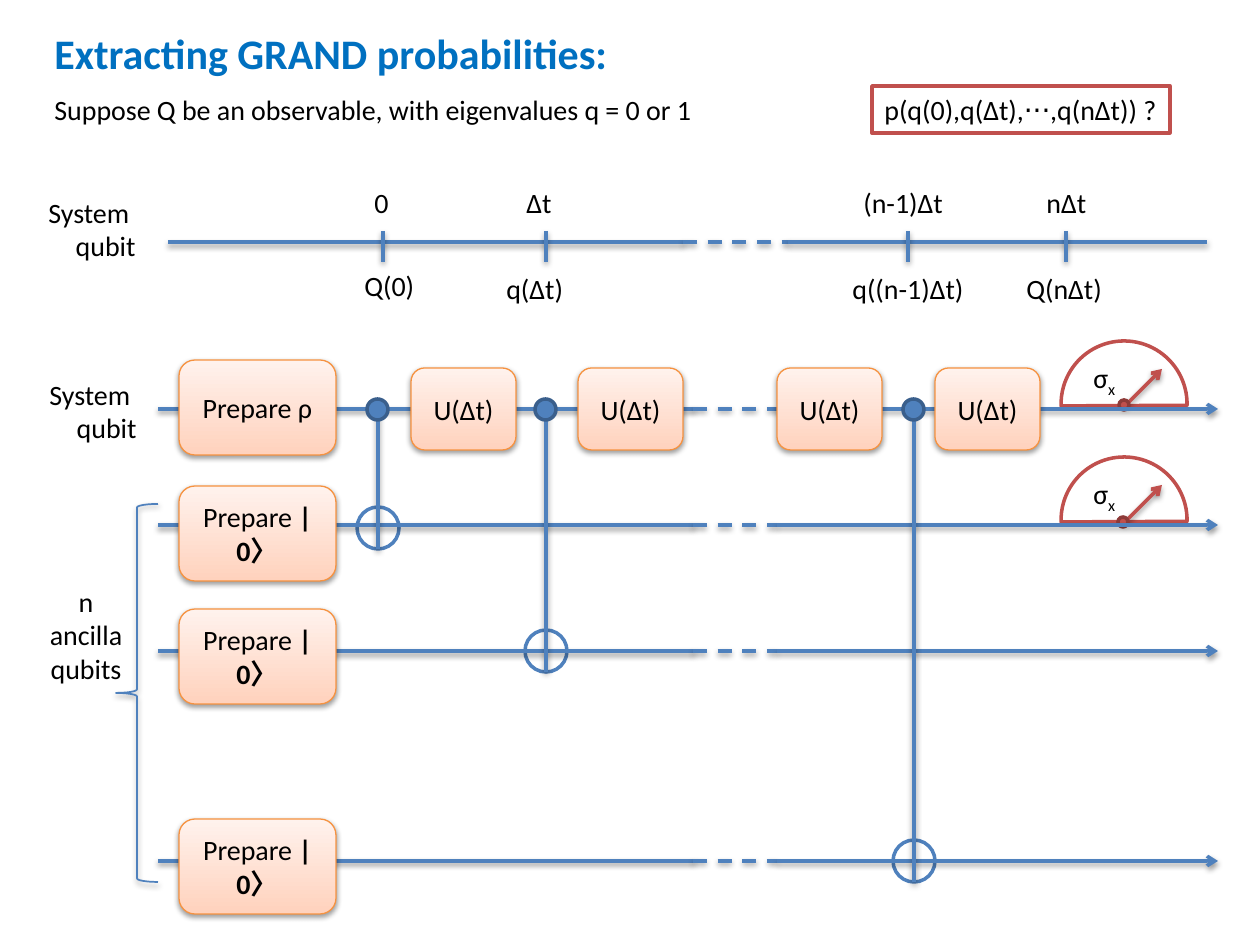
"""Build a slide showing the circuit that extracts GRAND probabilities."""
from lxml import etree
from pptx import Presentation
from pptx.dml.color import RGBColor
from pptx.enum.dml import MSO_LINE
from pptx.enum.shapes import MSO_CONNECTOR, MSO_SHAPE
from pptx.enum.text import MSO_ANCHOR, MSO_AUTO_SIZE, PP_ALIGN
from pptx.oxml.ns import qn
from pptx.util import Pt

PX = 914400 / 126
STRAIGHT = MSO_CONNECTOR.STRAIGHT
OVAL, ROUNDED, CHORD = MSO_SHAPE.OVAL, MSO_SHAPE.ROUNDED_RECTANGLE, MSO_SHAPE.CHORD
RECTANGLE, BRACE = MSO_SHAPE.RECTANGLE, MSO_SHAPE.LEFT_BRACE
LEFT, CENTER, RIGHT = PP_ALIGN.LEFT, PP_ALIGN.CENTER, PP_ALIGN.RIGHT
DASH = MSO_LINE.DASH
BLACK = RGBColor(0x00, 0x00, 0x00)
WHITE = RGBColor(0xFF, 0xFF, 0xFF)
TITLE_BLUE = RGBColor(0x00, 0x70, 0xC0)
BLUE = RGBColor(0x4F, 0x81, 0xBD)
DARK_BLUE = RGBColor(0x3A, 0x5F, 0x8C)
RED = RGBColor(0xC0, 0x50, 0x4D)
DARK_RED = RGBColor(0x8E, 0x3B, 0x39)
ORANGE = RGBColor(0xF6, 0x92, 0x40)
PEACH = RGBColor(0xFF, 0xD2, 0xBD)
PALE_PEACH = RGBColor(0xFF, 0xF2, 0xED)

PLAIN = {"name": "Calibri", "size": Pt(16)}
BOLD = {**PLAIN, "bold": True}
TITLE = {**BOLD, "size": Pt(24)}
SUBSCRIPT = dict(PLAIN)

prs = Presentation()
prs.slide_width, prs.slide_height = int(1260 * PX), int(945 * PX)
slide = prs.slides.add_slide(prs.slide_layouts[6])


def add_part(kind, box, fill, outline, weight=2, shadow=False):
    part = slide.shapes.add_shape(kind, *(int(v * PX) for v in box))
    part.shadow.inherit = shadow
    if fill is None:
        part.fill.background()
    else:
        part.fill.solid()
        part.fill.fore_color.rgb = fill
    part.line.color.rgb = outline
    part.line.width = Pt(weight)
    return part


def add_wire(ends, color=BLUE, dash=None, arrow=False):
    wire = slide.shapes.add_connector(STRAIGHT, *(int(v * PX) for v in ends))
    wire.line.color.rgb = color
    wire.line.width = Pt(2)
    if dash:
        wire.line.dash_style = dash
    if arrow:
        etree.SubElement(wire.line._get_or_add_ln(), qn("a:tailEnd"), type="arrow")
    return wire


texts = []
labels = [
    ((42, 21, 593, 63), ["Extracting GRAND probabilities:"], LEFT, TITLE, TITLE_BLUE, False),
    ((42, 86, 672, 47), ["Suppose Q be an observable, with eigenvalues q = 0 or 1"],
     LEFT, PLAIN, BLACK, False),
    ((32, 189, 116, 81), ["System ", "qubit"], RIGHT, PLAIN, BLACK, False),
    ((33, 371, 116, 81), ["System ", "qubit"], RIGHT, PLAIN, BLACK, False),
    ((37, 578, 98, 115), ["n", "ancilla", "qubits"], CENTER, PLAIN, BLACK, False),
]

ticks = [
    (383, "0", (362, 179, 40, 47), "Q(0)", (352, 262, 76, 47), False),
    (546, "Δt", (514, 179, 52, 47), "q(Δt)", (494, 265, 141, 47), True),
    (908, "(n-1)Δt", (851, 179, 107, 47), "q((n-1)Δt)", (840, 265, 158, 47), True),
    (1066, "nΔt", (1034, 179, 67, 47), "Q(nΔt)", (1014, 265, 141, 47), True),
]
add_wire((168, 242, 683, 242))
add_wire((683, 242, 788, 242), dash=DASH)
add_wire((788, 242, 1207, 242))
for x, time, time_box, value, value_box, wrap in ticks:
    add_wire((x, 231, x, 262))
    labels.append((time_box, [time], LEFT, PLAIN, BLACK, False))
    labels.append((value_box, [value], LEFT, PLAIN, BLACK, wrap))

question = add_part(RECTANGLE, (872, 86, 298, 47), WHITE, RED)
question.text_frame.word_wrap = False
texts.append((question.text_frame, [[("p(q(0),q(Δt),⋅⋅⋅,q(nΔt)) ?", PLAIN)]], LEFT, BLACK))

for top, pivot_x, pivot_y in ((341, 1119, 400), (457, 1118, 517)):
    meter = add_part(CHORD, (1061, top, 126, 126), WHITE, RED)
    meter.rotation = 105.7
    meter.adjustments[0], meter.adjustments[1] = 43.52, 153.32
    add_wire((1124, top + 66, 1162, top + 28), RED, arrow=True)
    add_part(OVAL, (pivot_x, pivot_y, 10, 10), RED, DARK_RED)
    sigma = slide.shapes.add_textbox(*(int(v * PX) for v in (1081, top + 13, 50, 47)))
    sigma.text_frame.word_wrap = False
    texts.append((sigma.text_frame, [[("σ", PLAIN), ("x", SUBSCRIPT)]], LEFT, BLACK))

system_y, *ancilla_ys = rows = (409, 525, 651, 861)
controls = list(zip((378, 546, 914), ancilla_ys, (507, 630, 840), (549, 672, 882)))
for x, _, target_top, _ in controls:
    add_part(OVAL, (x - 21, target_top, 42, 42), WHITE, BLUE)

inner_wires = []
for y in rows:
    add_wire((158, y, 693, y))
    inner_wires.append((add_wire((693, y, 777, y), dash=DASH),
                        add_wire((777, y, 1218, y), arrow=True)))
for x, _, _, bottom in controls:
    add_wire((x, system_y + 3, x, bottom))
    add_part(OVAL, (x - 11, system_y - 10, 21, 21), BLUE, DARK_BLUE)

ket_zero = [("Prepare ", PLAIN), ("|0〉", BOLD)]
gates = [((179, 360, 157, 95), [("Prepare ρ", PLAIN)])]
gates += [((179, top, 157, 95), ket_zero) for top in (486, 609, 819)]
gates += [((x, 368, 105, 82), [("U(Δt)", PLAIN)]) for x in (411, 578, 935, 777)]
for box, runs in gates:
    gate = add_part(ROUNDED, box, PEACH, ORANGE, 0.75, shadow=True)
    gate.fill.gradient()
    gate.fill.gradient_angle = 90
    for stop, color in zip(gate.fill.gradient_stops, (PEACH, PALE_PEACH)):
        stop.color.rgb = color
    gate._element.find(".//" + qn("a:effectRef")).set("idx", "1")
    texts.append((gate.text_frame, [runs], CENTER, BLACK))
dashed_wire, output_wire = inner_wires[0]
dashed_wire.end_connect(gate, 1)
output_wire.begin_connect(gate, 1)

add_part(BRACE, (116, 504, 42, 378), None, BLUE, 1, shadow=True)

for box, lines, align, style, color, wrap in labels:
    label = slide.shapes.add_textbox(*(int(v * PX) for v in box))
    for name, value in {"word_wrap": wrap, "auto_size": MSO_AUTO_SIZE.SHAPE_TO_FIT_TEXT,
                        "vertical_anchor": MSO_ANCHOR.TOP}.items():
        setattr(label.text_frame, name, value)
    texts.append((label.text_frame, [[(line, style)] for line in lines], align, color))

for frame, paragraphs, align, color in texts:
    for index, runs in enumerate(paragraphs):
        paragraph = frame.add_paragraph() if index else frame.paragraphs[0]
        paragraph.alignment = align
        for words, style in runs:
            run = paragraph.add_run()
            run.text = words
            run.font.color.rgb = color
            for name, value in style.items():
                setattr(run.font, name, value)
            if style is SUBSCRIPT:
                run.font._element.set("baseline", "-25000")

prs.save("out.pptx")
